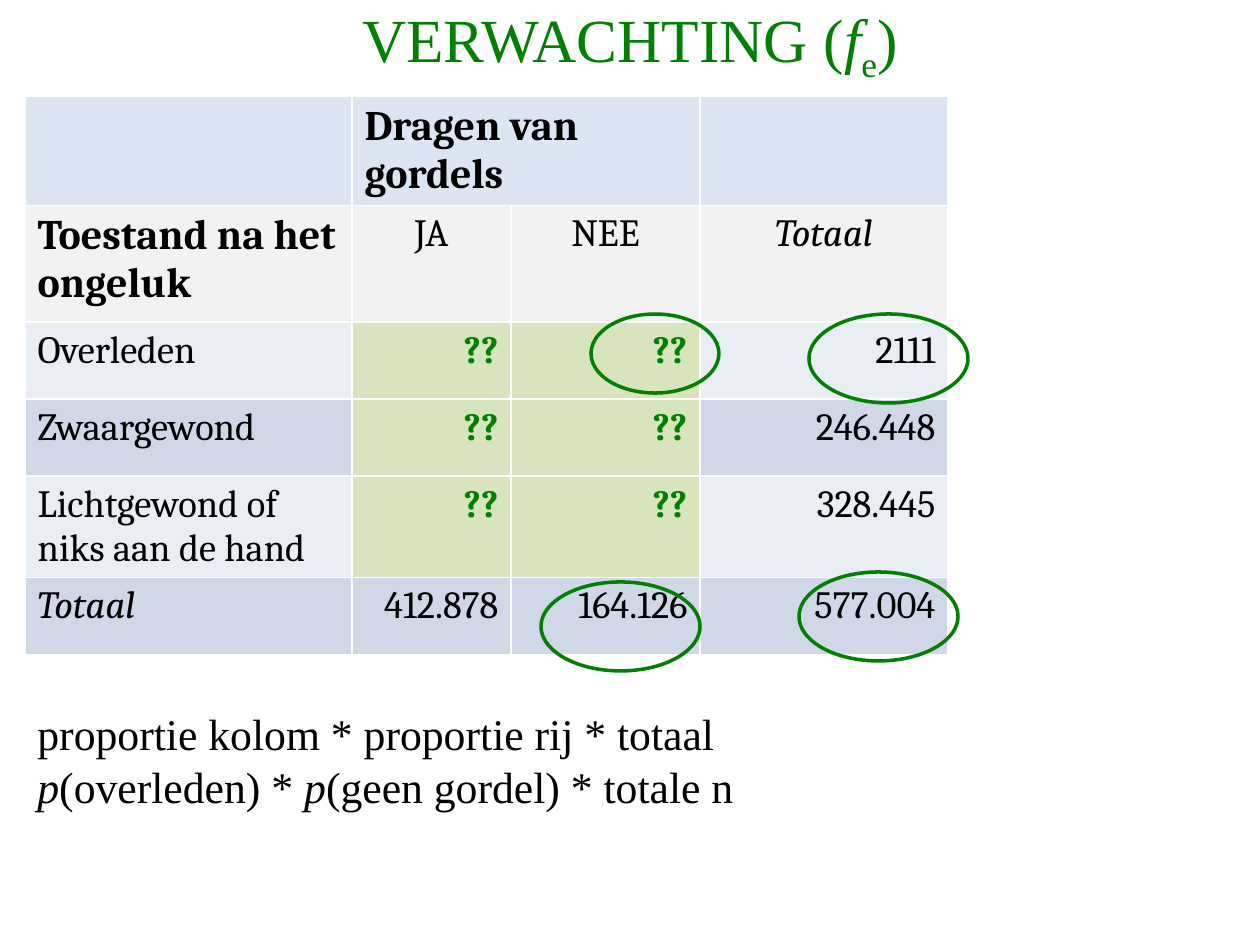
from pptx import Presentation
from pptx.dml.color import RGBColor
from pptx.enum.shapes import MSO_SHAPE as Shape
from pptx.enum.text import MSO_ANCHOR as Anchor, MSO_AUTO_SIZE as AutoSize, PP_ALIGN as Align
from pptx.util import Pt

EMU_PER_PX = 914400 // 126
COLORS = {
    "green": "008000", "black": "000000", "header": "DCE6F2", "subheader": "F2F2F2",
    "light": "E9EDF4", "dark": "D0D8E8", "unknown": "D7E4BD",
}
COLUMN_WIDTHS = [327, 159, 189, 248]
ROW_HEIGHTS = [103, 117, 77, 77, 96, 77]
ROW_FILLS = ["header", "subheader", "light", "dark", "light", "dark"]
ROWS = [
    ["", "Dragen van gordels", "", ""],
    ["Toestand na het ongeluk", "JA", "NEE", "Totaal"],
    ["Overleden", "??", "??", "2111"],
    ["Zwaargewond", "??", "??", "246.448"],
    ["Lichtgewond of\nniks aan de hand", "??", "??", "328.445"],
    ["Totaal", "412.878", "164.126", "577.004"],
]
HEADINGS = ("Dragen van gordels", "Toestand na het ongeluk")
CIRCLES = [(591, 314, 128, 79), (809, 314, 159, 89), (541, 582, 159, 89), (799, 572, 159, 89)]


def px(length):
    return length * EMU_PER_PX


class SlideBuilder:
    """Holds the text style and the slide being filled."""

    text_font = "Times New Roman"
    table_font = "Cambria"

    def __init__(self, slide):
        self.slide = slide

    def color(self, name):
        return RGBColor.from_string(COLORS[name])

    def format_run(self, run, font_name, size, color, bold=False, italic=False):
        font = run.font
        font.name, font.size = font_name, Pt(size)
        font.bold, font.italic = bold, italic
        font.color.rgb = self.color(color)

    def add_runs(self, paragraph, parts, size, color):
        """Add (text, mark) parts, where mark is "", "italic" or "sub"."""
        for text, mark in parts:
            run = paragraph.add_run()
            run.text = text
            self.format_run(run, self.text_font, size, color, italic=mark == "italic")
            if mark == "sub":
                run._r.get_or_add_rPr().set("baseline", "-25000")

    def title(self, parts, left, top, width, height):
        title = self.slide.shapes.title
        title.left, title.top, title.width, title.height = map(px, (left, top, width, height))
        frame = title.text_frame
        frame.auto_size = AutoSize.NONE
        frame.vertical_anchor = Anchor.MIDDLE
        paragraph = frame.paragraphs[0]
        paragraph.alignment = Align.CENTER
        self.add_runs(paragraph, parts, 35, "green")

    def text_box(self, lines, left, top, width, height):
        box = self.slide.shapes.add_textbox(*map(px, (left, top, width, height)))
        frame = box.text_frame
        frame.word_wrap = False
        for index, parts in enumerate(lines):
            paragraph = frame.add_paragraph() if index else frame.paragraphs[0]
            self.add_runs(paragraph, parts, 25, "black")

    def cell(self, cell, text, fill, alignment):
        unknown = text == "??"
        heading = text in HEADINGS
        cell.fill.solid()
        cell.fill.fore_color.rgb = self.color("unknown" if unknown else fill)
        cell.text_frame.text = text
        for paragraph in cell.text_frame.paragraphs:
            paragraph.alignment = alignment
            for run in paragraph.runs:
                self.format_run(run, self.table_font, 24 if heading else 22,
                                "green" if unknown else "black",
                                bold=heading or unknown, italic=text == "Totaal")

    def table(self, left, top):
        size = (sum(COLUMN_WIDTHS), sum(ROW_HEIGHTS))
        frame = self.slide.shapes.add_table(len(ROWS), len(COLUMN_WIDTHS),
                                            *map(px, (left, top, *size)))
        table = frame.table
        for column, width in zip(table.columns, COLUMN_WIDTHS):
            column.width = px(width)
        for row, height in zip(table.rows, ROW_HEIGHTS):
            row.height = px(height)
        table.cell(0, 1).merge(table.cell(0, 2))
        for r, texts in enumerate(ROWS):
            for c, text in enumerate(texts):
                if c == 0 or r == 0:
                    alignment = Align.LEFT
                else:
                    alignment = Align.CENTER if r == 1 else Align.RIGHT
                self.cell(table.cell(r, c), text, ROW_FILLS[r], alignment)

    def circle(self, left, top, width, height):
        circle = self.slide.shapes.add_shape(Shape.OVAL, *map(px, (left, top, width, height)))
        circle.shadow.inherit = False
        circle.fill.background()
        circle.line.color.rgb = self.color("green")
        circle.line.width = Pt(2)


def main():
    presentation = Presentation()
    presentation.slide_width, presentation.slide_height = px(1260), px(945)
    title_only = presentation.slide_layouts[5]
    builder = SlideBuilder(presentation.slides.add_slide(title_only))

    builder.title([("VERWACHTING (", ""), ("f", "italic"), ("e", "sub"), (")", "")],
                  63, 0, 1134, 86)
    builder.table(25, 96)
    builder.text_box([
        [("proportie kolom * proportie rij * totaal", "")],
        [("p", "italic"), ("(overleden) * ", ""),
         ("p", "italic"), ("(geen gordel) * totale n", "")],
    ], 25, 701, 736, 118)
    for bounds in CIRCLES:
        builder.circle(*bounds)

    presentation.save("out.pptx")


if __name__ == "__main__":
    main()
